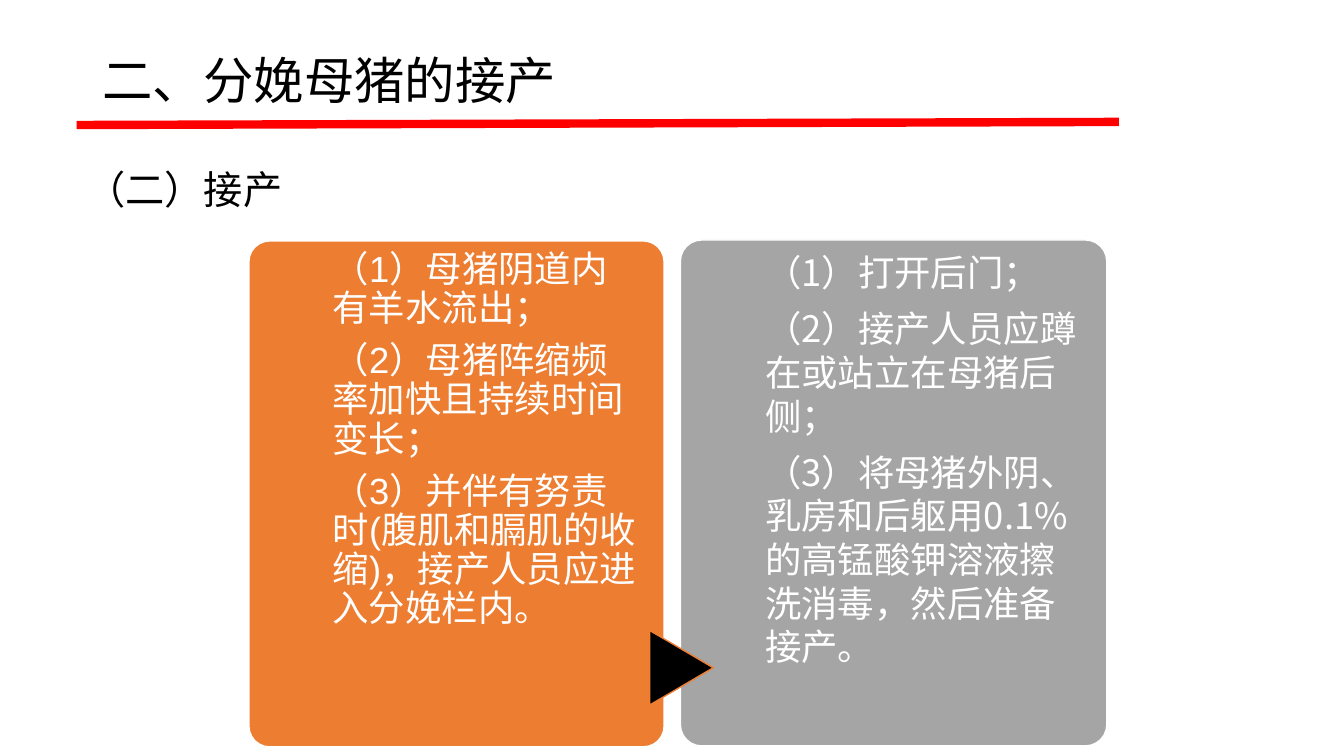
from typing import NamedTuple

from lxml import etree
from pptx import Presentation
from pptx.dml.color import RGBColor
from pptx.enum import shapes, text
from pptx.oxml import ns
from pptx.util import Pt

HUES = {
    "red": "FF0000",
    "orange": "ED7D31",
    "gray": "A5A5A5",
    "black": "000000",
    "white": "FFFFFF",
}
SANS = "Noto Sans CJK SC"


class Box(NamedTuple):
    left: float
    top: float
    width: float
    height: float


class Card(NamedTuple):
    box: Box
    hue: str
    area: Box
    font: str
    pitch: float
    steps: list[str]


CARDS = [
    Card(Box(177.8, 172.1, 296.6, 361.4), "orange",
         Box(237.6, 172.1, 221, 361.4), "Arial", 0.9,
         ["（1）母猪阴道内有羊水流出；",
          "（2）母猪阵缩频率加快且持续时间变长；",
          "（3）并伴有努责时(腹肌和膈肌的收缩)，接产人员应进入分娩栏内。"]),
    Card(Box(486, 171.4, 304.6, 361.4), "gray",
         Box(546.5, 171.4, 226.8, 361.4), SANS, 1.0,
         ["（1）打开后门；",
          "（2）接产人员应蹲在或站立在母猪后侧；",
          "（3）将母猪外阴、乳房和后躯用0.1%的高锰酸钾溶液擦洗消毒，然后准备接产。"]),
]
ARROW = Box(460.1, 454.3, 53.3, 45.4)


def paint(name: str) -> RGBColor:
    return RGBColor.from_string(HUES[name])


def write(slide, box: Box, lines: list[str], *, size: float, hue: str = "black",
          font: str = SANS, pitch: float = 0.9, after: float = 0,
          inset: tuple = (7.2, 3.6, 7.2, 3.6),
          anchor=text.MSO_ANCHOR.MIDDLE) -> None:
    frame = slide.shapes.add_textbox(*map(Pt, box)).text_frame
    frame.word_wrap = True
    frame.vertical_anchor = anchor
    (frame.margin_left, frame.margin_top,
     frame.margin_right, frame.margin_bottom) = map(Pt, inset)
    for i, line in enumerate(lines):
        para = frame.add_paragraph() if i else frame.paragraphs[0]
        para.line_spacing = pitch
        para.space_after = Pt(after)
        run = para.add_run()
        run.text = line
        run.font.size = Pt(size)
        run.font.name = font
        run.font.color.rgb = paint(hue)
        east = etree.SubElement(run.font._element, ns.qn("a:ea"))
        east.set("typeface", SANS)


def draw(slide, kind, box: Box, fill: str, edge: str):
    shape = slide.shapes.add_shape(kind, *map(Pt, box))
    shape.shadow.inherit = False
    shape.fill.solid()
    shape.fill.fore_color.rgb = paint(fill)
    shape.line.color.rgb = paint(edge)
    shape.line.width = Pt(1)
    return shape


def rule(slide) -> None:
    """Draw the red line under the title."""
    line = slide.shapes.add_connector(
        shapes.MSO_CONNECTOR.STRAIGHT, Pt(54.7), Pt(89.3), Pt(799.2), Pt(87.1))
    line.line.color.rgb = paint("red")
    line.line.width = Pt(6)
    etree.SubElement(line._element.spPr, ns.qn("a:effectLst"))


def panel(slide, card: Card) -> None:
    shape = draw(slide, shapes.MSO_SHAPE.ROUNDED_RECTANGLE, card.box, card.hue, "white")
    shape.adjustments[0] = 0.05


def fill_in(slide, card: Card) -> None:
    """Write the steps of a card."""
    write(slide, card.area, card.steps, size=26, hue="white", font=card.font,
          pitch=card.pitch, after=9, inset=(0, 7.2, 0, 0), anchor=text.MSO_ANCHOR.TOP)


def main() -> None:
    deck = Presentation()
    deck.slide_width, deck.slide_height = Pt(960), Pt(540)
    slide = deck.slides.add_slide(deck.slide_layouts[6])

    rule(slide)
    write(slide, Box(54.7, 85, 828, 104.4), ["（二）接产"], size=28)
    first, last = CARDS
    panel(slide, first)
    fill_in(slide, first)
    panel(slide, last)
    arrow = draw(slide, shapes.MSO_SHAPE.FLOWCHART_EXTRACT, ARROW, "black", "orange")
    arrow.rotation = 90
    fill_in(slide, last)
    write(slide, Box(66.2, 7.2, 828, 104.4), ["二、分娩母猪的接产"], size=36)

    deck.save("out.pptx")


if __name__ == "__main__":
    main()
